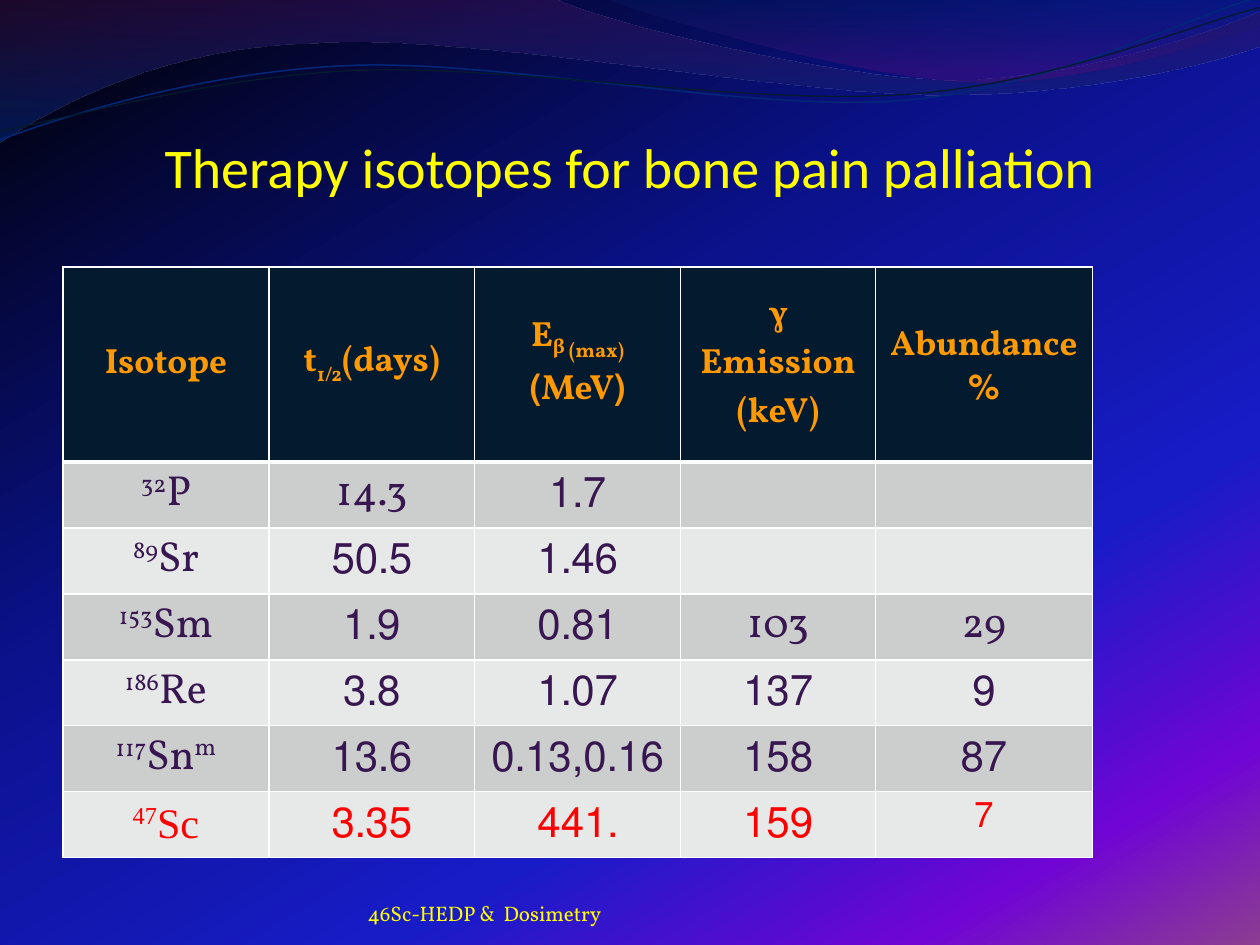
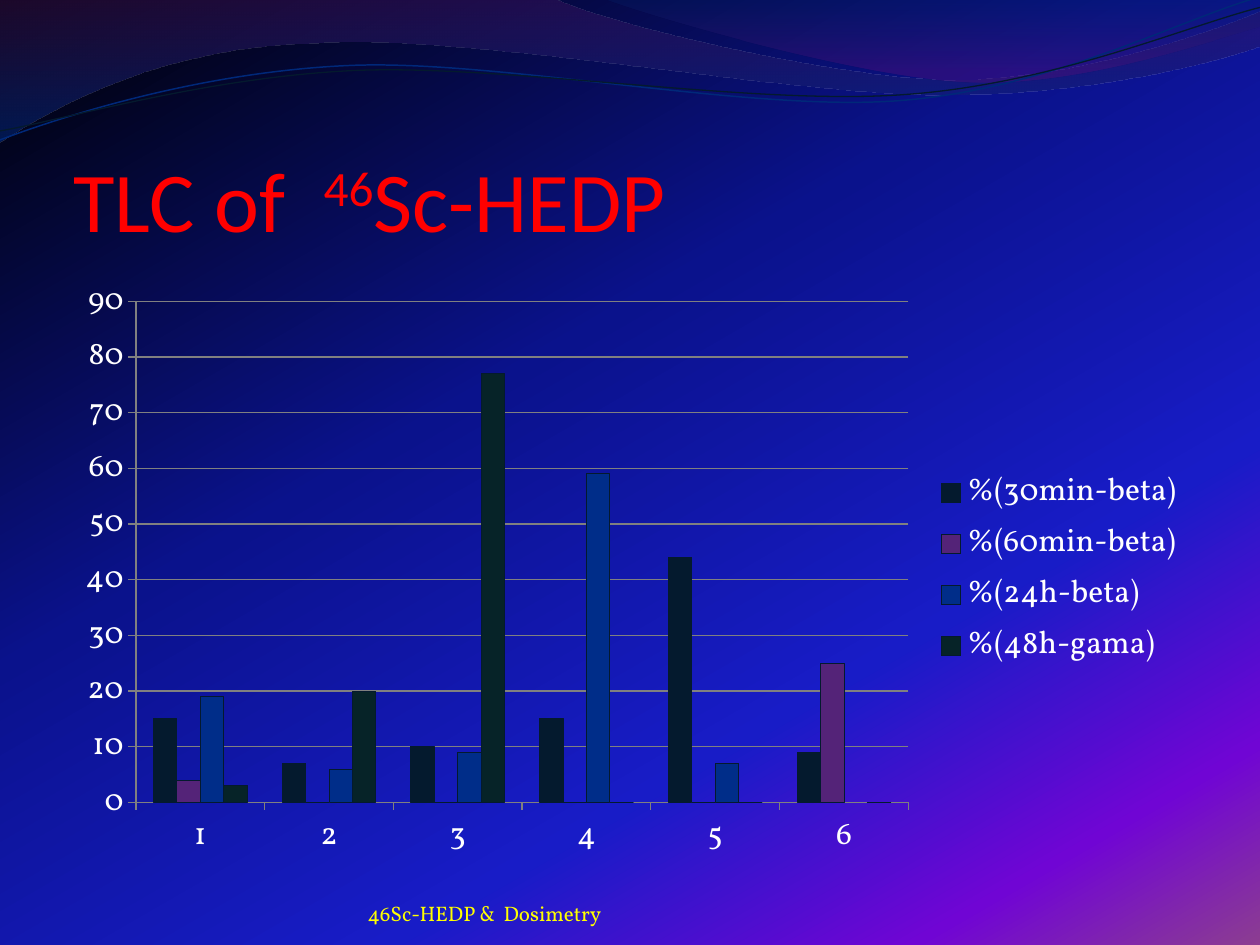
import math
from lxml import etree
from pptx import Presentation
from pptx import util as u
from pptx.chart import data as cd
from pptx.dml import color as col
from pptx.enum import chart as ch, text
from pptx.oxml import ns

# Theme: colours, fonts and type sizes
T = {
    "yellow": "FFFF00", "red": "FF0000", "white": "FFFFFF", "orange": "FF9900",
    "navy": "041A2E", "plum": "381750", "bands": ("E7E8E8", "CCCDCD"),
    "grid": "808080",
    "series": ("041A2E", "542378", "002D89", "062328"),
    "sky": [(0, "000000", 100), (40, "0A128C", 100), (70, "181CC7", 100),
            (88, "7005D4", 100), (100, "8C3D91", 100)],
    "head": "Calibri", "body": "Vollkorn", "serif": "Times New Roman",
    "small": 12, "chart": 18, "th": 20, "td": 24, "title": 32, "big": 48.6,
}
rgb = col.RGBColor.from_string


def grad(owner, fill, stops, angle):
    """Gradient of (position, colour, opacity) stops, angle clockwise."""
    fill.gradient()
    fill.gradient_angle = 360 - angle
    gs_lst = owner.element.find(".//" + ns.qn("a:gsLst"))
    gs_lst.clear()
    for pos, color, alpha in stops:
        gs = etree.SubElement(gs_lst, ns.qn("a:gs"), pos=str(pos * 1000))
        clr = etree.SubElement(gs, ns.qn("a:srgbClr"), val=color)
        if alpha < 100:
            etree.SubElement(clr, ns.qn("a:alpha"), val=str(alpha * 1000))


def write(p, runs, size, font, color, bold=False, center=True, rtl=False):
    """Fill a paragraph with a string or (text, baseline %) runs."""
    p.alignment = text.PP_ALIGN.CENTER if center else text.PP_ALIGN.LEFT
    if rtl:
        p._p.get_or_add_pPr().set("rtl", "1")
    for words, base in [(runs, 0)] if isinstance(runs, str) else runs:
        r = p.add_run()
        r.text = words
        for key, val in {"size": u.Pt(size), "name": font, "bold": bold}.items():
            setattr(r.font, key, val)
        r.font.color.rgb = rgb(color)
        if base:
            r._r.get_or_add_rPr().set("baseline", str(base * 1000))


prs = Presentation()
prs.slide_width, prs.slide_height = u.Cm(25.4), u.Cm(19.05)

# Shared background and layout
master, layout = prs.slide_master, prs.slide_layouts[5]
grad(master, master.background.fill, T["sky"], 60)
for ph in list(layout.placeholders):
    if ph.placeholder_format.idx:
        ph.element.getparent().remove(ph.element)
slides = [prs.slides.add_slide(layout) for _ in range(2)]

# Waves in cm: start, then lines (2 numbers) or Bezier curves (6 numbers)
waves = [
    {"start": (0, 0), "stops": [(0, "3F145F", 45), (100, "00297C", 55)], "parts": [
        (11.18, -0.03), (12.09, 0.43, 16.87, 1.6, 19.25, 1.6),
        (21.67, 1.6, 24.33, 0.66, 25.4, 0.23), (25.43, 0.91),
        (24.97, 1.12, 22.1, 1.93, 18.95, 1.91), (15.8, 1.91, 9.7, 0.71, 6.53, 0.86),
        (3.28, 0.91, 1.17, 2.11, -0.03, 2.87), (0, 0)]},
    {"start": (12.17, -0.03), "stops": [(0, "002165", 30), (80, "4C1079", 45)], "parts": [
        (12.93, 0.28, 17.32, 1.57, 19.53, 1.65),
        (21.74, 1.75, 24.41, 0.81, 25.4, 0.53), (25.4, 0), (12.17, -0.03)]},
    {"start": (0, 2.82), "line": ("002879", 0.85), "center": (12.67, 1.46), "parts": [
        (1.22, 2.36, 4.01, 1.45, 7.04, 1.32), (10.03, 1.19, 15.06, 2.26, 18.11, 2.03),
        (21.16, 1.8, 23.83, 0.38, 25.35, -0.05)]},
    {"start": (0, 2.64), "line": ("041A2E", 0.75), "center": (12.69, 1.5), "parts": [
        (1.19, 2.44, 4.17, 1.55, 7.19, 1.42), (10.24, 1.3, 15.16, 2.13, 18.21, 1.91),
        (21.23, 1.7, 23.9, 0.53, 25.4, 0.15)]},
]
TILT = 2.7
cos, sin = math.cos(math.radians(TILT)), math.sin(math.radians(TILT))
for wave in waves:
    pts = [wave["start"]]
    for part in wave["parts"]:
        pts += zip(part[::2], part[1::2])
    if "center" in wave:  # level the line, the shape's rotation tilts it back
        cx, cy = wave["center"]
        pts = [(cx + (x - cx) * cos - (y - cy) * sin,
                cy + (x - cx) * sin + (y - cy) * cos) for x, y in pts]
    emu = [(u.Cm(x), u.Cm(y)) for x, y in pts]
    fb = slides[0].shapes.build_freeform(*emu[0])
    fb.add_line_segments(emu[1:], close="stops" in wave)
    sp = fb.convert_to_shape()
    sp.shadow.inherit = False
    # Join each three points of a curve into one Bezier segment
    segments = iter(sp.element.findall(".//" + ns.qn("a:lnTo")))
    for part in wave["parts"]:
        seg = next(segments)
        if len(part) == 6:
            seg.tag = ns.qn("a:cubicBezTo")
            for _ in range(2):
                extra = next(segments)
                seg.append(extra[0])
                extra.getparent().remove(extra)
    if "stops" in wave:
        grad(sp, sp.fill, wave["stops"], 90)
        sp.line.fill.background()
    else:
        sp.rotation = 360 - TILT
        sp.fill.background()
        sp.line.color.rgb = rgb(wave["line"][0])
        sp.line.width = u.Pt(wave["line"][1])
    layout.element.cSld.spTree.append(sp.element)

# Titles and footers
titles = [
    ((1.27, 0.84, 22.86, 3.18), "Therapy isotopes for bone pain palliation",
     T["title"], T["yellow"], True),
    ((1.48, 2.74, 22.86, 2.29), [("TLC of  ", 0), ("46", 30), ("Sc-HEDP", 0)],
     T["big"], T["red"], False),
]
for s, (box, runs, size, color, center) in zip(slides, titles):
    foot = s.shapes.add_textbox(u.Cm(7.41), u.Cm(17.65), u.Cm(9.32), u.Cm(1.02))
    for key, val in zip(("left", "top", "width", "height"), box):
        setattr(s.shapes.title, key, u.Cm(val))
    for sp, top in ((s.shapes.title, 0.13), (foot, 0)):
        frame = {"word_wrap": True, "auto_size": text.MSO_AUTO_SIZE.NONE,
                 "vertical_anchor": text.MSO_ANCHOR.BOTTOM, "margin_left": 0,
                 "margin_top": u.Cm(top), "margin_right": 0, "margin_bottom": 0}
        for key, val in frame.items():
            setattr(sp.text_frame, key, val)
    write(s.shapes.title.text_frame.paragraphs[0], runs, size, T["head"], color, center=center)
    write(foot.text_frame.paragraphs[0], "46Sc-HEDP &  Dosimetry",
          T["small"], T["body"], T["yellow"], center=False)

# Slide 1: isotope table, each cell a list of paragraphs
header = [["Isotope"], [[("t", 0), ("1/2", -30), ("(days)", 0)]],
          [[("E", 0), ("β ", -20), ("(max)", -30)], "(MeV)"],
          ["γ Emission (keV)"], ["Abundance", "%"]]
isotopes = [
    ([("32", 30), ("P", 0)], "14.3", "1.7", "", ""),
    ([("89", 30), ("Sr", 0)], "50.5", "1.46", "", ""),
    ([("153", 30), ("Sm", 0)], "1.9", "0.81", "103", "29"),
    ([("186", 30), ("Re", 0)], "3.8", "1.07", "137", "9"),
    ([("117", 30), ("Sn", 0), ("m", 34)], "13.6", "0.13,0.16", "158", "87"),
    ([("47", 34), ("Sc", 0)], "3.35", ".441", "159", "7"),
]
rows = [header] + [[[c] for c in row] for row in isotopes]
left_to_right = {"14.3", "103", "29"}
last = len(rows) - 1
tbl = slides[0].shapes.add_table(len(rows), len(header), u.Cm(1.27), u.Cm(5.38),
                                 u.Cm(20.75), u.Cm(11.91)).table
for c, width in enumerate((4.15, 4.15, 4.15, 3.93, 4.37)):
    tbl.columns[c].width = u.Cm(width)
for i, row in enumerate(rows):
    tbl.rows[i].height = u.Cm(1.33 if i else 3.93)
    for j, paras in enumerate(row):
        cell = tbl.cell(i, j)
        corner = i == last and j == len(row) - 1
        side, edge = (0.03, 0.03) if corner else (0.2, 0)
        fmt = {"margin_left": u.Cm(side), "margin_right": u.Cm(side),
               "margin_top": u.Cm(edge), "margin_bottom": u.Cm(edge),
               "vertical_anchor": text.MSO_ANCHOR.TOP if corner else text.MSO_ANCHOR.MIDDLE}
        for key, val in fmt.items():
            setattr(cell, key, val)
        # Borders, thick under the header
        for tag in ("lnL", "lnR", "lnT", "lnB"):
            width = 3 if (i, tag) in ((0, "lnB"), (1, "lnT")) else 1
            ln = etree.SubElement(cell._tc.get_or_add_tcPr(), ns.qn("a:" + tag),
                                  w=str(u.Pt(width)))
            fill = etree.SubElement(ln, ns.qn("a:solidFill"))
            etree.SubElement(fill, ns.qn("a:srgbClr"), val=T["white"])
        cell.fill.solid()
        cell.fill.fore_color.rgb = rgb(T["bands"][i % 2] if i else T["navy"])
        # Text
        size = T["th"] if i == 0 or corner else T["td"]
        font = T["head"] if corner else T["serif"] if i == last else T["body"]
        color = T["orange"] if i == 0 else T["red"] if i == last else T["plum"]
        for k, runs in enumerate(paras):
            if not runs:
                continue
            p = cell.text_frame.add_paragraph() if k else cell.text_frame.paragraphs[0]
            rtl = i < 3 if j == 0 else str(runs) not in left_to_right
            write(p, runs, size, font, color, bold=i == 0, rtl=rtl)
            if corner:
                p.line_spacing, p.space_after = 1.19, u.Pt(6)

# Slide 2: TLC column chart
data = cd.CategoryChartData()
data.categories = ["1", "2", "3", "4", "5", "6"]
for name, vals in (("%(30min-beta)", (15, 7, 10, 15, 44, 9)),
                   ("%(60min-beta)", (4, 0, 0, 0, 0, 25)),
                   ("%(24h-beta)", (19, 6, 9, 59, 7, None)),
                   ("%(48h-gama)", (3, 20, 77, 0, 0, 0))):
    data.add_series(name, vals)
chart = slides[1].shapes.add_chart(ch.XL_CHART_TYPE.COLUMN_CLUSTERED, u.Cm(1.27), u.Cm(5.38),
                                   u.Cm(22.86), u.Cm(12.19), data).chart
chart.font.size, chart.font.name = u.Pt(T["chart"]), T["body"]
chart.font.color.rgb = rgb(T["white"])
chart.has_title = False
chart.has_legend = True
chart.legend.position = ch.XL_LEGEND_POSITION.RIGHT
chart.legend.include_in_layout = False
plot = chart.plots[0]
plot.gap_width, plot.overlap, plot.vary_by_categories = 150, 0, False
for series, color in zip(plot.series, T["series"]):
    series.format.fill.solid()
    series.format.fill.fore_color.rgb = rgb(color)
    series.format.line.color.rgb = rgb(T["navy"])
    series.format.line.width = u.Pt(0.5)
val_axis, cat_axis = chart.value_axis, chart.category_axis
for key, val in {"minimum_scale": 0, "maximum_scale": 90, "major_unit": 10,
                 "has_major_gridlines": True}.items():
    setattr(val_axis, key, val)
for axis in (val_axis, cat_axis):
    axis.major_tick_mark = ch.XL_TICK_MARK.OUTSIDE
    axis.minor_tick_mark = ch.XL_TICK_MARK.NONE
for part in (val_axis, cat_axis, val_axis.major_gridlines):
    part.format.line.color.rgb = rgb(T["grid"])
    part.format.line.width = u.Pt(0.75)

prs.save("out.pptx")
